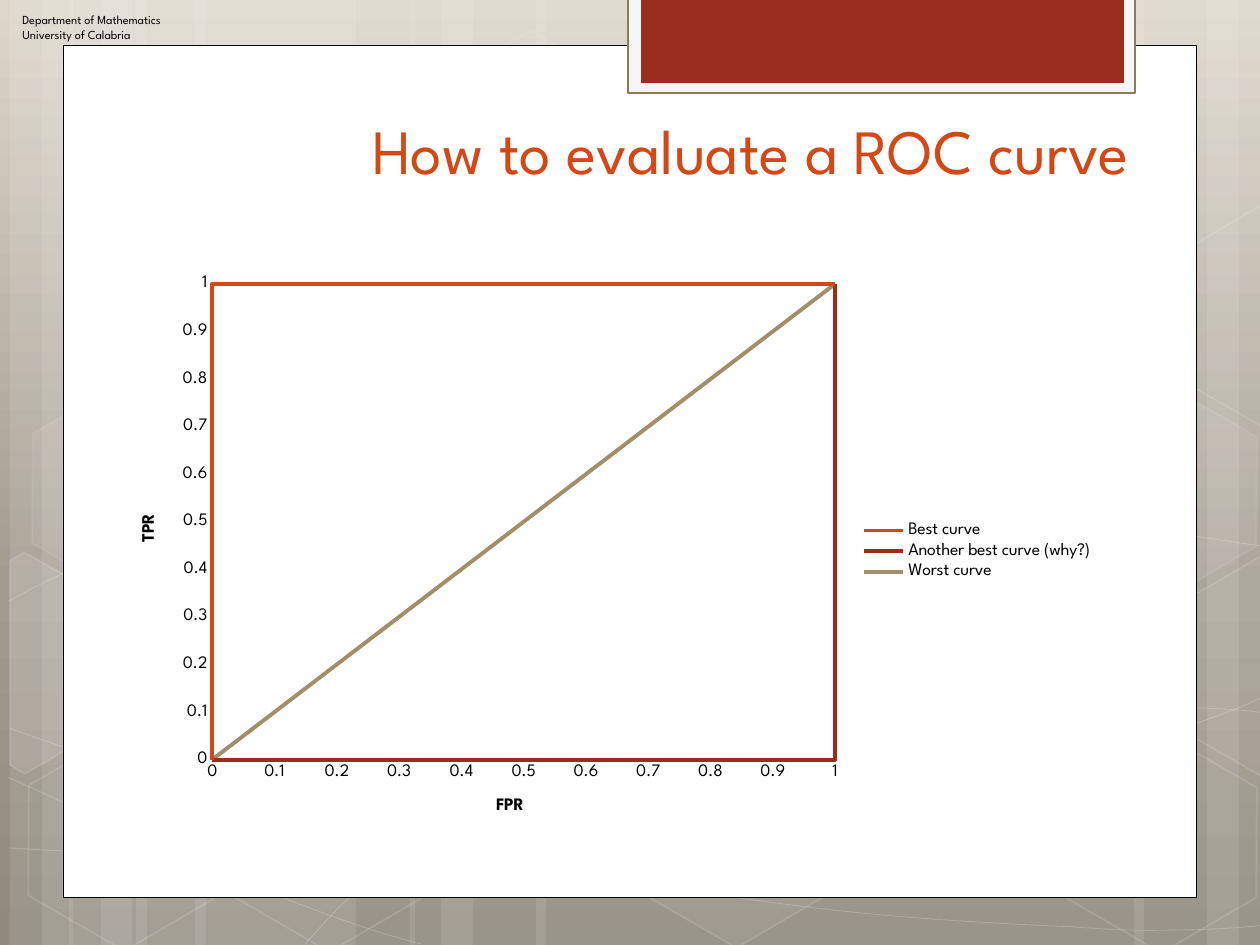
from copy import deepcopy

from lxml.etree import SubElement
from pptx import Presentation
from pptx.chart.data import XyChartData
from pptx.dml.color import RGBColor
from pptx.enum.chart import XL_CHART_TYPE as ChartType
from pptx.enum.chart import XL_LEGEND_POSITION as LegendPosition
from pptx.enum.chart import XL_TICK_MARK as TickMark
from pptx.enum.shapes import MSO_SHAPE as Shape
from pptx.enum.text import MSO_ANCHOR as Anchor
from pptx.enum.text import MSO_AUTO_SIZE as AutoSize
from pptx.enum.text import PP_ALIGN as Align
from pptx.oxml.ns import qn
from pptx.util import Pt

PX = 7257.14
WIDTH, HEIGHT = 1260, 945
FONT = "League Spartan"
WHITE = RGBColor(0xFF, 0xFF, 0xFF)
BLACK = RGBColor(0, 0, 0)
PALE = RGBColor(0xF5, 0xF5, 0xF5)
BROWN = RGBColor(0x8B, 0x7B, 0x57)
ORANGE = RGBColor(0xD3, 0x48, 0x17)
RED = RGBColor(0x9B, 0x2D, 0x1F)
TAN = RGBColor(0xA2, 0x8E, 0x6A)

TITLE = "How to evaluate a ROC curve"
AFFILIATION = ["Department of Mathematics", "University of Calabria"]
CURVES = [
    ("Best curve", ORANGE, [(0, 0), (0, 1), (1, 1)]),
    ("Another best curve (why?)", RED, [(0, 0), (1, 0), (1, 1)]),
    ("Worst curve", TAN, [(0, 0), (1, 1)]),
]
CHART_BOX = (115, 265, 992, 576)
PLOT_BOX = (212, 284, 623, 476)
LEGEND_BOX = (858, 518, 238, 67)
AXIS_TITLES = [("FPR", (493, 793)), ("TPR", (137, 511))]

GRADIENT = [
    (0, RGBColor(0xDD, 0xD7, 0xCB)),
    (0.62, RGBColor(0xA2, 0x9C, 0x90)),
    (1, RGBColor(0x8F, 0x8A, 0x7D)),
]
BANDS = [
    (136, 220), (10, 63), (42, 105), (195, 220), (69, 63), (101, 105),
    (924, 220), (1207, 63), (1134, 105), (536, 388), (410, 63), (441, 105),
]
SWEEPS = [
    [(9, 848), (77, 852), (145, 856), (239, 854), (334, 853), (451, 851), (577, 838),
     (703, 825), (882, 801), (998, 777), (1113, 753), (1231, 715), (1269, 694)],
    [(9, 601), (45, 581), (82, 562), (152, 543), (224, 524), (326, 496), (437, 488),
     (549, 479), (685, 478), (824, 488), (963, 498), (1193, 537), (1269, 547)],
    [(8, 777), (160, 847), (311, 916), (421, 944)],
    [(9, 728), (48, 742), (88, 756), (161, 776), (234, 795), (344, 827), (450, 848),
     (554, 869), (687, 892), (791, 905), (896, 919), (1008, 924), (1075, 927),
     (1140, 932), (1158, 930), (1191, 930), (1223, 929), (1246, 927), (1269, 925)],
    [(305, 944), (328, 919), (350, 893), (381, 871), (411, 848), (454, 823), (489, 805),
     (524, 788), (546, 780), (592, 767), (638, 754), (722, 737), (766, 728),
     (811, 719), (818, 719), (857, 717), (896, 714), (958, 709), (1000, 708),
     (1045, 707), (1116, 708), (1116, 708), (1116, 708), (1201, 708), (1201, 708),
     (1223, 709), (1245, 710), (1256, 712), (1268, 713), (1264, 712), (1268, 713)],
]
HEXAGONS = [
    (421, 45, 4, 8), (626, 742, 6, 12), (14, 745, 0, 12), (18, 393, 7, 8),
    (219, 746, 0, 12), (949, 571, 10, 12), (1051, 747, 0, 12), (1051, 396, 7, 8),
]
CUT_HEXAGONS = [
    (10, [(10, 561), (24, 552), (121, 607), (120, 718), (25, 774), (10, 765)]),
    (4, [(1167, 611), (1261, 556), (1271, 562), (1271, 772), (1263, 777), (1167, 722)]),
    (0, [(1167, 261), (1261, 205), (1273, 212), (1271, 422), (1263, 427), (1167, 372)]),
]
PANELS = [
    ((63, 45, 1134, 853), WHITE, BLACK, 0.5),
    ((628, -3, 507, 96), PALE, BROWN, 1.25),
    ((641, -3, 483, 86), RED, None, 0),
]


def emu(*lengths):
    return [round(length * PX) for length in lengths]


def set_alpha(shape, route, percent):
    if percent < 100:
        color = shape.element.find(f"{qn('p:spPr')}/{route}{qn('a:solidFill')}/{qn('a:srgbClr')}")
        SubElement(color, qn("a:alpha")).set("val", str(percent * 1000))


def paint(shape, fill=None, line=None, width=1, fill_alpha=100, line_alpha=100):
    shape.shadow.inherit = False
    if fill is None or fill_alpha == 0:
        shape.fill.background()
    else:
        shape.fill.solid()
        shape.fill.fore_color.rgb = fill
        set_alpha(shape, "", fill_alpha)
    if line is None:
        shape.line.fill.background()
    else:
        shape.line.color.rgb = line
        shape.line.width = Pt(width)
        set_alpha(shape, qn("a:ln") + "/", line_alpha)


def add_outline(shapes, points, close):
    corners = [emu(*point) for point in points]
    builder = shapes.build_freeform(*corners[0])
    builder.add_line_segments(corners[1:], close=close)
    return builder.convert_to_shape()


def add_sweep(shapes, nodes):
    sweep = add_outline(shapes, nodes, False)
    outline = sweep.element.find(f".//{qn('a:path')}")
    segments = outline.findall(qn("a:lnTo"))
    for start in range(0, len(segments), 3):
        curve = SubElement(outline, qn("a:cubicBezTo"))
        for segment in segments[start:start + 3]:
            curve.append(segment[0])
            outline.remove(segment)
    return sweep


def add_background(slide):
    fill = slide.background.fill
    fill.gradient()
    fill.gradient_angle = 270
    stops = slide.element.find(f".//{qn('a:gsLst')}")
    stops.append(deepcopy(stops[0]))
    for stop, (position, color) in zip(fill.gradient_stops, GRADIENT):
        stop.position = position
        stop.color.rgb = color


def add_decoration(slide):
    shapes = slide.shapes.add_group_shape().shapes
    for left, width in BANDS:
        band = shapes.add_shape(Shape.RECTANGLE, *emu(left, 0, width, HEIGHT))
        paint(band, WHITE, fill_alpha=10)
    for nodes in SWEEPS:
        paint(add_sweep(shapes, nodes), line=WHITE, width=0.5, line_alpha=20)
    for left, top, fill_alpha, line_alpha in HEXAGONS:
        hexagon = shapes.add_shape(Shape.HEXAGON, *emu(left, top, 220, 191))
        hexagon.rotation = 30
        hexagon.adjustments[0] = 0.285
        paint(hexagon, WHITE, WHITE, 1, fill_alpha, line_alpha)
    for fill_alpha, points in CUT_HEXAGONS:
        paint(add_outline(shapes, points, True), WHITE, WHITE, 1, fill_alpha, 12)
    for box, fill, line, width in PANELS:
        paint(slide.shapes.add_shape(Shape.RECTANGLE, *emu(*box)), fill, line, width)


def write(paragraph, text, size, color):
    run = paragraph.add_run()
    run.text = text
    run.font.name, run.font.size = FONT, Pt(size)
    run.font.color.rgb = color
    return run


def add_texts(slide):
    frame = slide.shapes.add_textbox(*emu(10, 6, 277, 43)).text_frame
    frame.word_wrap = True
    for index, text in enumerate(AFFILIATION):
        paragraph = frame.add_paragraph() if index else frame.paragraphs[0]
        write(paragraph, text, 7, BLACK)
    title = slide.shapes.title
    slide.shapes.element.append(title.element)
    title.left, title.top, title.width, title.height = emu(174, 105, 968, 157)
    frame = title.text_frame
    frame.auto_size, frame.vertical_anchor = AutoSize.NONE, Anchor.TOP
    frame.paragraphs[0].alignment = Align.RIGHT
    write(frame.paragraphs[0], TITLE, 36, ORANGE)


def place(element, box, inner=False):
    layout = element.find(qn("c:layout"))
    if layout is None:
        layout = SubElement(element, qn("c:layout"))
        element.insert(1, layout)
    left, top, width, height = CHART_BOX
    fractions = [(box[0] - left) / width, (box[1] - top) / height]
    fractions += [length / whole for length, whole in zip(box[2:], (width, height))]
    manual = SubElement(layout, qn("c:manualLayout"))
    settings = [("layoutTarget", "inner")] if inner else []
    settings += [("xMode", "edge"), ("yMode", "edge")]
    settings += [(name, f"{value:.3f}") for name, value in zip("xywh", fractions)]
    for name, value in settings:
        SubElement(manual, qn(f"c:{name}")).set("val", value)


def add_roc_chart(slide):
    data = XyChartData()
    for name, _, points in CURVES:
        series = data.add_series(name)
        for x, y in points:
            series.add_data_point(x, y)
    chart = slide.shapes.add_chart(ChartType.XY_SCATTER_LINES_NO_MARKERS, *emu(*CHART_BOX), data).chart
    chart.has_title = False
    chart.font.name, chart.font.size = FONT, Pt(10)
    chart.font.color.rgb = BLACK
    chart.plots[0].vary_by_categories = False
    for series, (_, color, _) in zip(chart.plots[0].series, CURVES):
        series.smooth = False
        series.format.line.color.rgb = color
        series.format.line.width = Pt(2.25)
    for axis, (text, corner) in zip((chart.category_axis, chart.value_axis), AXIS_TITLES):
        axis.minimum_scale, axis.maximum_scale, axis.major_unit = 0, 1, 0.1
        axis.has_major_gridlines = False
        axis.major_tick_mark = axis.minor_tick_mark = TickMark.NONE
        axis.tick_labels.number_format = "General"
        axis.tick_labels.number_format_is_linked = False
        axis.format.line.fill.background()
        write(axis.axis_title.text_frame.paragraphs[0], text, 10, BLACK).font.bold = True
        place(axis.axis_title.element, corner)
    chart.has_legend = True
    chart.legend.position = LegendPosition.RIGHT
    chart.legend.include_in_layout = False
    place(chart.element.find(f".//{qn('c:legend')}"), LEGEND_BOX)
    place(chart.element.find(f".//{qn('c:plotArea')}"), PLOT_BOX, inner=True)


def main():
    """Build the slide on evaluating a ROC curve."""
    presentation = Presentation()
    presentation.slide_width, presentation.slide_height = emu(WIDTH, HEIGHT)
    slide = presentation.slides.add_slide(presentation.slide_layouts[5])
    add_background(slide)
    add_decoration(slide)
    add_texts(slide)
    add_roc_chart(slide)
    presentation.save("out.pptx")


if __name__ == "__main__":
    main()
